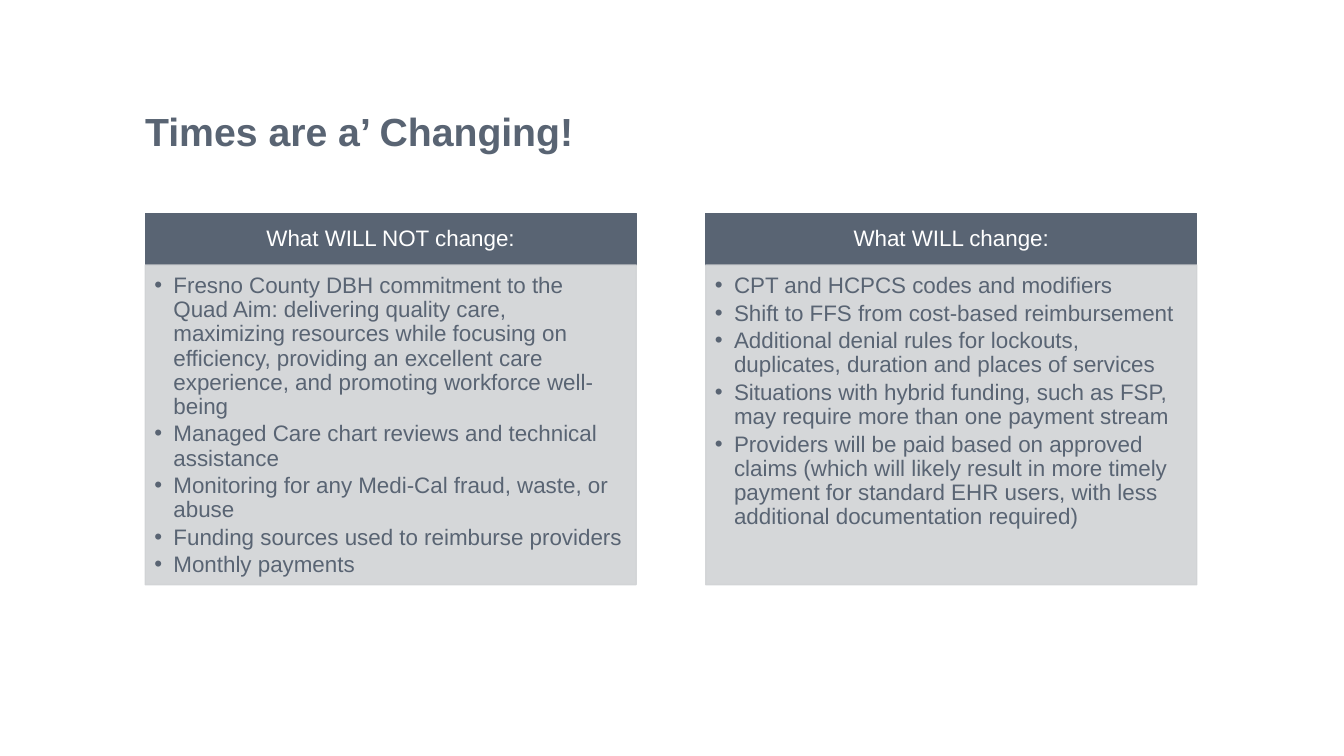
from lxml import etree
from pptx import Presentation
from pptx.dml.color import RGBColor
from pptx.enum.text import MSO_ANCHOR, MSO_AUTO_SIZE, PP_ALIGN
from pptx.oxml.ns import qn
from pptx.util import Inches, Pt

LEFT, CENTER = PP_ALIGN.LEFT, PP_ALIGN.CENTER
TOP, MIDDLE, BOTTOM = MSO_ANCHOR.TOP, MSO_ANCHOR.MIDDLE, MSO_ANCHOR.BOTTOM
NO_FIT = MSO_AUTO_SIZE.NONE

COLORS = {"slate": "596473", "panel": "D1D3D5", "white": "FFFFFF"}
FONT = "Arial"
COMPARISON_LAYOUT = 4
MARGIN, COLUMN_WIDTH, GAP = 1.44, 4.87, 0.69
CONTENT_WIDTH = 2 * COLUMN_WIDTH + GAP
COLUMN_TOP, HEADING_HEIGHT, BODY_HEIGHT = 2.12, 0.51, 3.17
INDENT = 0.19

COLUMNS = [
    ("What WILL NOT change:", [
        "Fresno County DBH commitment to the Quad Aim: delivering quality care, "
        "maximizing resources while focusing on efficiency, providing an excellent "
        "care experience, and promoting workforce well-being",
        "Managed Care chart reviews and technical assistance",
        "Monitoring for any Medi-Cal fraud, waste, or abuse",
        "Funding sources used to reimburse providers",
        "Monthly payments",
    ]),
    ("What WILL change:", [
        "CPT and HCPCS codes and modifiers",
        "Shift to FFS from cost-based reimbursement",
        "Additional denial rules for lockouts, duplicates, duration and places of services",
        "Situations with hybrid funding, such as FSP, may require more than one payment stream",
        "Providers will be paid based on approved claims (which will likely result in "
        "more timely payment for standard EHR users, with less additional "
        "documentation required)",
    ]),
]


def color(name):
    return RGBColor.from_string(COLORS[name])


def place(shape, box, insets, anchor):
    shape.left, shape.top, shape.width, shape.height = map(Inches, box)
    frame = shape.text_frame
    frame.word_wrap = True
    frame.auto_size = NO_FIT
    frame.vertical_anchor = anchor
    (frame.margin_left, frame.margin_top,
     frame.margin_right, frame.margin_bottom) = map(Inches, insets)


def format_paragraph(paragraph, size, color_name, alignment, bold=False, space_after=0):
    paragraph.alignment = alignment
    paragraph.line_spacing = 0.9
    paragraph.space_before = Pt(0)
    paragraph.space_after = Pt(space_after)
    for run in paragraph.runs:
        run.font.name = FONT
        run.font.size = Pt(size)
        run.font.bold = bold
        run.font.color.rgb = color(color_name)


def add_bullet(paragraph):
    properties = paragraph._p.get_or_add_pPr()
    properties.set("marL", str(Inches(INDENT)))
    properties.set("indent", str(-Inches(INDENT)))
    etree.SubElement(properties, qn("a:buFont")).set("typeface", FONT)
    etree.SubElement(properties, qn("a:buChar")).set("char", "•")


def paint(shape, color_name, opacity=100):
    shape.fill.solid()
    shape.fill.fore_color.rgb = color(color_name)
    shape.line.color.rgb = color(color_name)
    shape.line.width = Pt(1)
    if opacity < 100:
        for solid in shape._element.spPr.iter(qn("a:srgbClr")):
            etree.SubElement(solid, qn("a:alpha")).set("val", str(opacity * 1000))


def fill_title(title, box):
    place(title, box, (0, 0, 0, 0), BOTTOM)
    title.text_frame.text = "Times are a’ Changing!"
    format_paragraph(title.text_frame.paragraphs[0], 28, "slate", LEFT, bold=True)


def fill_column(heading, body, box, heading_text, items):
    left, top, width, height = box
    place(heading, (left, top, width, HEADING_HEIGHT), (0.12, 0.07, 0.12, 0.07), MIDDLE)
    paint(heading, "slate")
    heading.text_frame.text = heading_text
    format_paragraph(heading.text_frame.paragraphs[0], 16, "white", CENTER)

    place(body, (left, top + HEADING_HEIGHT, width, height - HEADING_HEIGHT),
          (0.09, 0.09, 0.12, 0.14), TOP)
    paint(body, "panel", opacity=90)
    body.text_frame.text = "\n".join(items)
    for paragraph in body.text_frame.paragraphs:
        format_paragraph(paragraph, 16, "slate", LEFT, space_after=2.4)
        add_bullet(paragraph)


def main():
    presentation = Presentation()
    presentation.slide_width = Inches(13.33)
    presentation.slide_height = Inches(7.5)
    slide = presentation.slides.add_slide(presentation.slide_layouts[COMPARISON_LAYOUT])
    fill_title(slide.shapes.title, (MARGIN, 0.4, CONTENT_WIDTH, 1.14))
    parts = {shape.placeholder_format.idx: shape for shape in slide.placeholders}
    for index, (heading_text, items) in enumerate(COLUMNS):
        box = (MARGIN + index * (COLUMN_WIDTH + GAP), COLUMN_TOP,
               COLUMN_WIDTH, HEADING_HEIGHT + BODY_HEIGHT)
        fill_column(parts[2 * index + 1], parts[2 * index + 2], box, heading_text, items)
    presentation.save("out.pptx")


if __name__ == "__main__":
    main()
